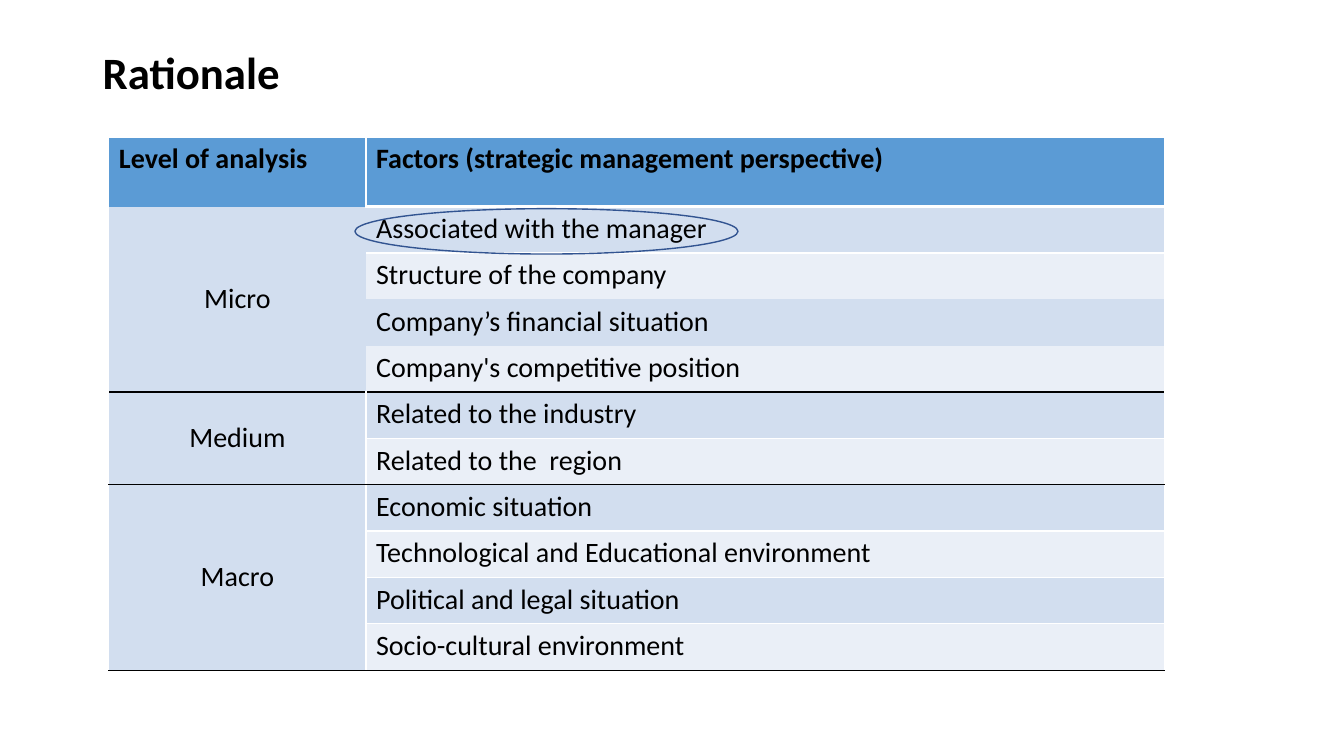
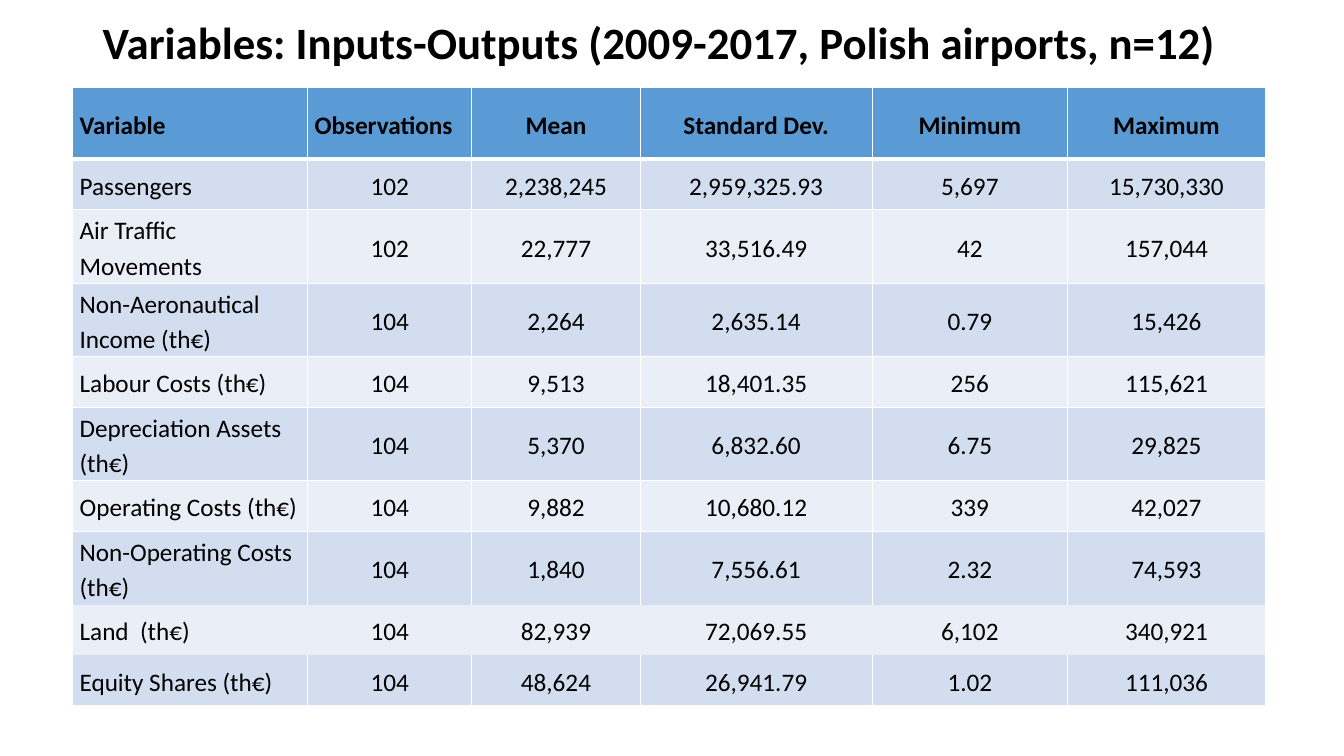
"""Build two table slides: the rationale and the airport variables."""
from lxml import etree
from pptx import Presentation
from pptx.dml.color import RGBColor
from pptx.enum.shapes import MSO_SHAPE
from pptx.enum.text import MSO_ANCHOR, PP_ALIGN
from pptx.oxml.ns import qn
from pptx.util import Emu, Pt

LEFT, CENTER = PP_ALIGN.LEFT, PP_ALIGN.CENTER
TOP, MIDDLE = MSO_ANCHOR.TOP, MSO_ANCHOR.MIDDLE
OVAL = MSO_SHAPE.OVAL

PX = 9144
FONT = "Calibri"
BLACK, WHITE, OUTLINE = "000000", "FFFFFF", "325491"
HEADER_FILL, BANDS = "5B9BD5", ("D2DEEF", "EAEFF7")
THIN, THICK = 1, 3
SIDE_TAGS = {"l": "a:lnL", "r": "a:lnR", "t": "a:lnT", "b": "a:lnB"}

RATIONALE_TITLE = "Rationale"
RATIONALE_HEADS = ("Level of analysis", "Factors (strategic management perspective)")
LEVELS = [
    ("Micro", "", [
        ("Associated with the manager", "trb"),
        ("Structure of the company", "tr"),
        ("Company’s financial situation", ""),
        ("Company's competitive position", ""),
    ]),
    ("Medium", "lr", [
        ("Related to the industry", "lrtb"),
        ("Related to the  region", "lrtb"),
    ]),
    ("Macro", "lr", [
        ("Economic situation", "lrtb"),
        ("Technological and Educational environment", "lrtb"),
        ("Political and legal situation", "lrtb"),
        ("Socio-cultural environment", "lrtb"),
    ]),
]
RATIONALE_COLUMNS = (255, 792)
RATIONALE_HEADER_HEIGHT, FACTOR_HEIGHT = 69, 46

VARIABLES_TITLE = "Variables: Inputs-Outputs (2009-2017, Polish airports, n=12)"
VARIABLES_HEADS = ("Variable", "Observations", "Mean", "Standard Dev.", "Minimum", "Maximum")
VARIABLES = [
    ("Passengers", "102", "2,238,245", "2,959,325.93", "5,697", "15,730,330"),
    ("Air Traffic Movements", "102", "22,777", "33,516.49", "42", "157,044"),
    ("Non-Aeronautical Income (th€)", "104", "2,264", "2,635.14", "0.79", "15,426"),
    ("Labour Costs (th€)", "104", "9,513", "18,401.35", "256", "115,621"),
    ("Depreciation Assets (th€)", "104", "5,370", "6,832.60", "6.75", "29,825"),
    ("Operating Costs (th€)", "104", "9,882", "10,680.12", "339", "42,027"),
    ("Non-Operating Costs (th€)", "104", "1,840", "7,556.61", "2.32", "74,593"),
    ("Land  (th€)", "104", "82,939", "72,069.55", "6,102", "340,921"),
    ("Equity Shares (th€)", "104", "48,624", "26,941.79", "1.02", "111,036"),
]
VARIABLES_COLUMNS = (233, 163, 167, 230, 194, 196)
VARIABLES_HEIGHTS = (71, 50, 73, 73, 50, 73, 50, 73, 50, 50)
OPEN_SIDES = {"Non-Operating Costs (th€)": "lrt", "Land  (th€)": "", "Equity Shares (th€)": "lrb"}


def px(*lengths):
    """Turn pixel lengths into EMU."""
    return [Emu(length * PX) for length in lengths]


def color(code):
    """Turn a hex string into a colour."""
    return RGBColor.from_string(code)


def write(frame, text, size, bold=False, align=LEFT, spacing=1.0):
    """Write one styled run into the first paragraph of a frame."""
    para = frame.paragraphs[0]
    para.alignment = align
    para.line_spacing = spacing
    span = para.add_run()
    span.text = text
    span.font.name = FONT
    span.font.size = Pt(size)
    span.font.bold = bold
    span.font.color.rgb = color(BLACK)


def add_title(page, text, place):
    """Add a slide title."""
    box = page.shapes.add_textbox(*px(*place))
    box.text_frame.word_wrap = True
    box.text_frame.vertical_anchor = MIDDLE
    write(box.text_frame, text, 32, bold=True, spacing=0.9)


def add_grid(page, left, top, widths, heights):
    """Add an unbanded table with the given column widths and row heights."""
    place = px(left, top, sum(widths), sum(heights))
    table = page.shapes.add_table(len(heights), len(widths), *place).table
    table.first_row = table.horz_banding = False
    for column, width in zip(table.columns, px(*widths)):
        column.width = width
    for row, height in zip(table.rows, px(*heights)):
        row.height = height
    return table


def edges(sides, hue=WHITE, weight=THIN):
    """Map each listed side to a border colour and weight."""
    return {side: (hue, weight) for side in sides}


def paint(cell, fill, borders):
    """Set the fill and all four borders of a cell."""
    properties = cell._tc.get_or_add_tcPr()
    for side, tag in SIDE_TAGS.items():
        line = etree.SubElement(properties, qn(tag))
        if side in borders:
            hue, weight = borders[side]
            line.set("w", str(Pt(weight)))
            solid = etree.SubElement(line, qn("a:solidFill"))
            etree.SubElement(solid, qn("a:srgbClr")).set("val", hue)
        else:
            line.set("w", "0")
            etree.SubElement(line, qn("a:noFill"))
    cell.fill.solid()
    cell.fill.fore_color.rgb = color(fill)


def build_rationale(page):
    """Build the levels and factors table with one factor circled."""
    add_title(page, RATIONALE_TITLE, (92, 40, 1178, 69))
    count = sum(len(factors) for _, _, factors in LEVELS)
    heights = [RATIONALE_HEADER_HEIGHT] + [FACTOR_HEIGHT] * count
    table = add_grid(page, 108, 136, RATIONALE_COLUMNS, heights)
    header_edge = edges("b", weight=THICK)
    for column, (head, lower) in enumerate(zip(RATIONALE_HEADS, ({}, header_edge))):
        cell = table.cell(0, column)
        write(cell.text_frame, head, 20, bold=True)
        paint(cell, HEADER_FILL, edges("lrt") | lower)
    row = 1
    for level, label_sides, factors in LEVELS:
        first, last = row, row + len(factors) - 1
        for factor, sides in factors:
            rules = edges("b", BLACK) if row == last else {}
            if row == first > 1:
                rules |= edges("t", BLACK)
            label_rules = rules | (edges("b", BLACK) if row == first else {})
            paint(table.cell(row, 0), BANDS[0], edges(label_sides) | label_rules)
            if row == 1:
                rules |= edges("t", weight=THICK)
            cell = table.cell(row, 1)
            write(cell.text_frame, factor, 20)
            paint(cell, BANDS[(row - 1) % 2], edges(sides) | rules)
            row += 1
        label = table.cell(first, 0)
        label.merge(table.cell(last, 0))
        label.vertical_anchor = MIDDLE
        write(label.text_frame, level, 20, align=CENTER)
    ring = page.shapes.add_shape(OVAL, *px(352, 207, 380, 45))
    ring.shadow.inherit = False
    ring.fill.background()
    ring.line.color.rgb = color(OUTLINE)
    ring.line.width = Pt(1)


def build_variables(page):
    """Build the table of descriptive statistics."""
    add_title(page, VARIABLES_TITLE, (92, 15, 1129, 59))
    table = add_grid(page, 72, 87, VARIABLES_COLUMNS, VARIABLES_HEIGHTS)
    for row, values in enumerate([VARIABLES_HEADS] + VARIABLES):
        header = row == 0
        fill = HEADER_FILL if header else BANDS[(row - 1) % 2]
        borders = edges(OPEN_SIDES.get(values[0], "lrtb"))
        if row < 2:
            borders |= edges("b" if header else "t", weight=THICK)
        for column, value in enumerate(values):
            cell = table.cell(row, column)
            cell.margin_left, cell.margin_top, cell.margin_right, cell.margin_bottom = px(7, 0, 7, 0)
            cell.vertical_anchor = MIDDLE
            is_left = column == 0 or (header and column == 1)
            write(cell.text_frame, value, 18, header, LEFT if is_left else CENTER, 1.15)
            paint(cell, fill, borders)


def main():
    """Build and save the deck."""
    deck = Presentation()
    deck.slide_width, deck.slide_height = px(1333, 750)
    for build in (build_rationale, build_variables):
        build(deck.slides.add_slide(deck.slide_layouts[6]))
    deck.save("out.pptx")


if __name__ == "__main__":
    main()
